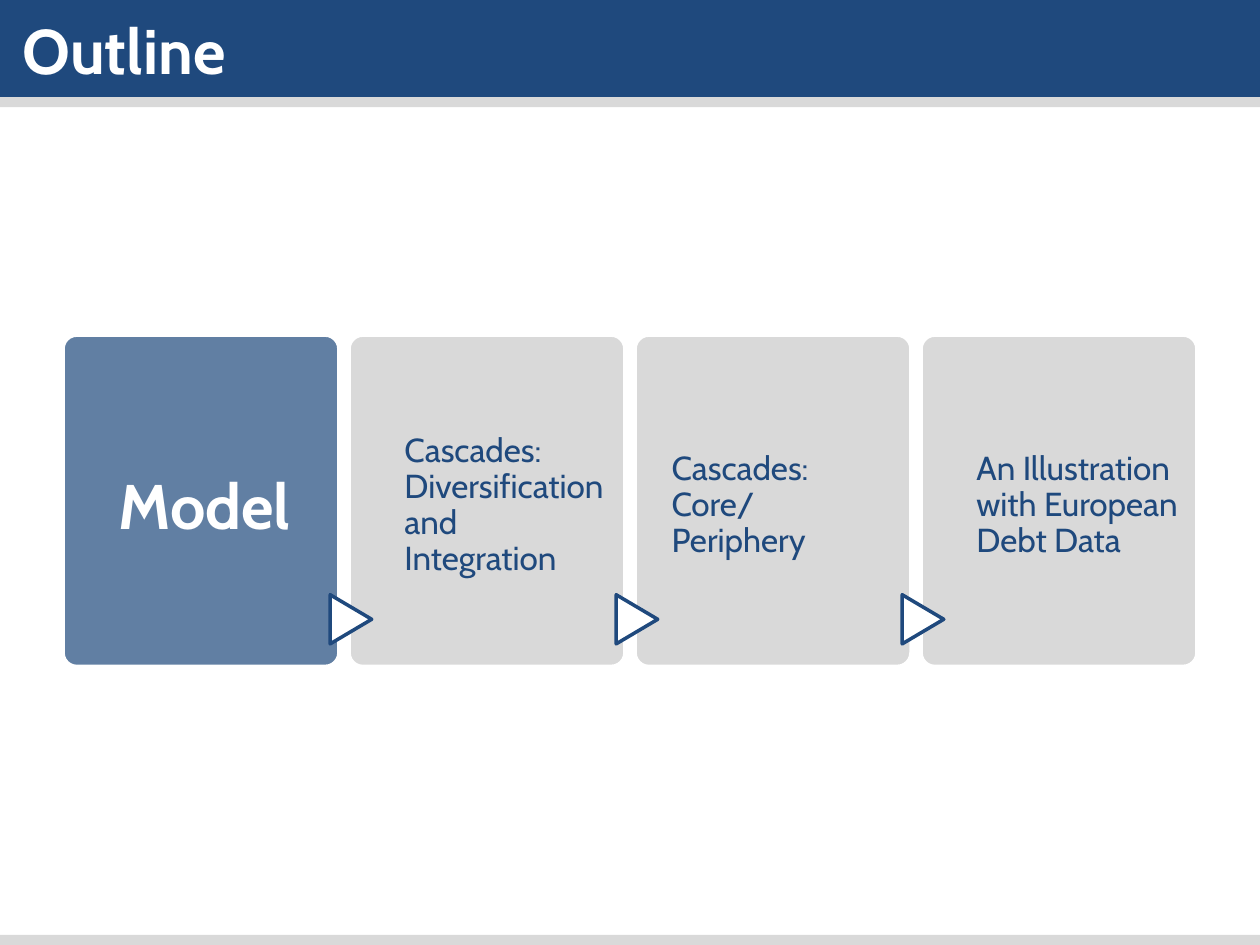
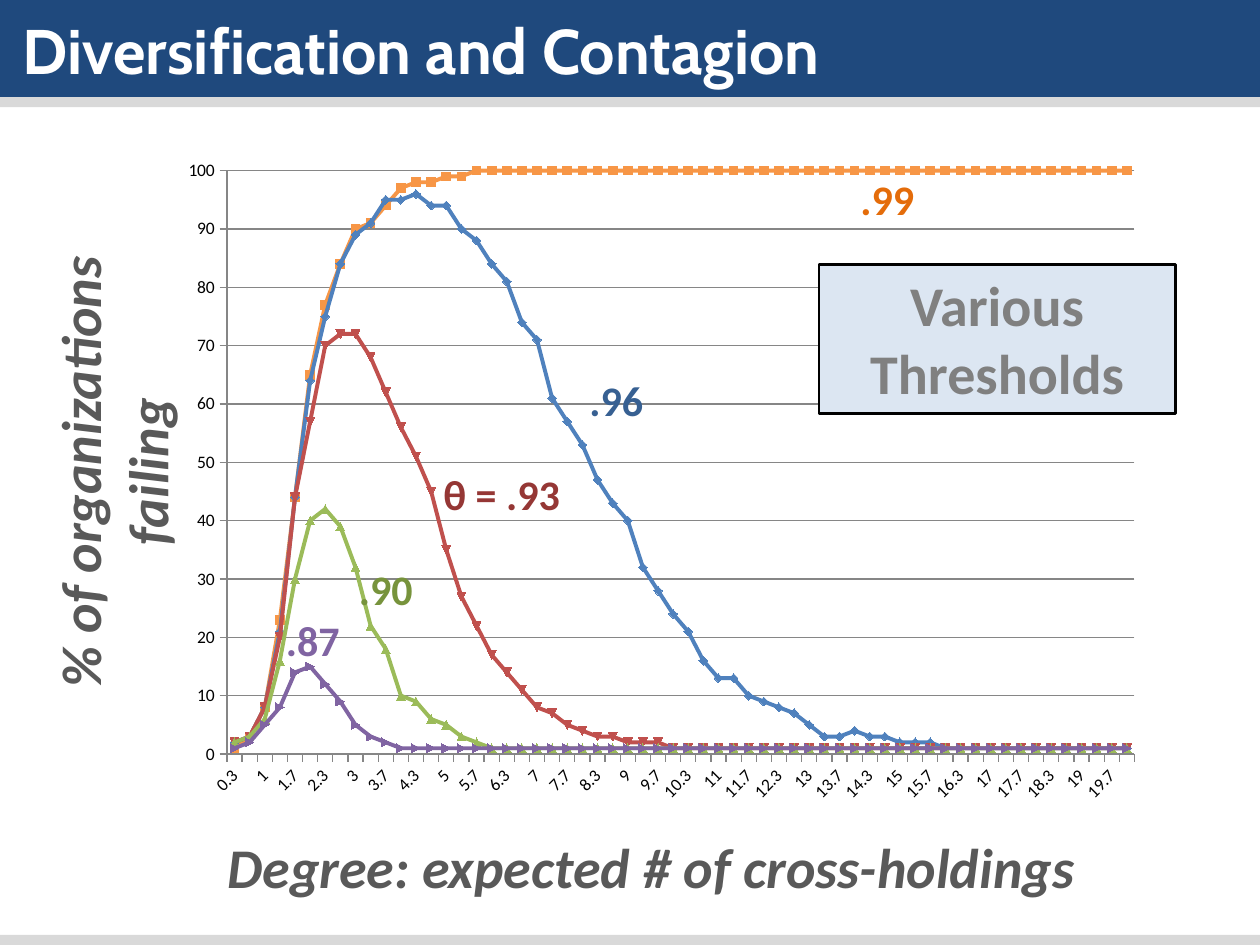
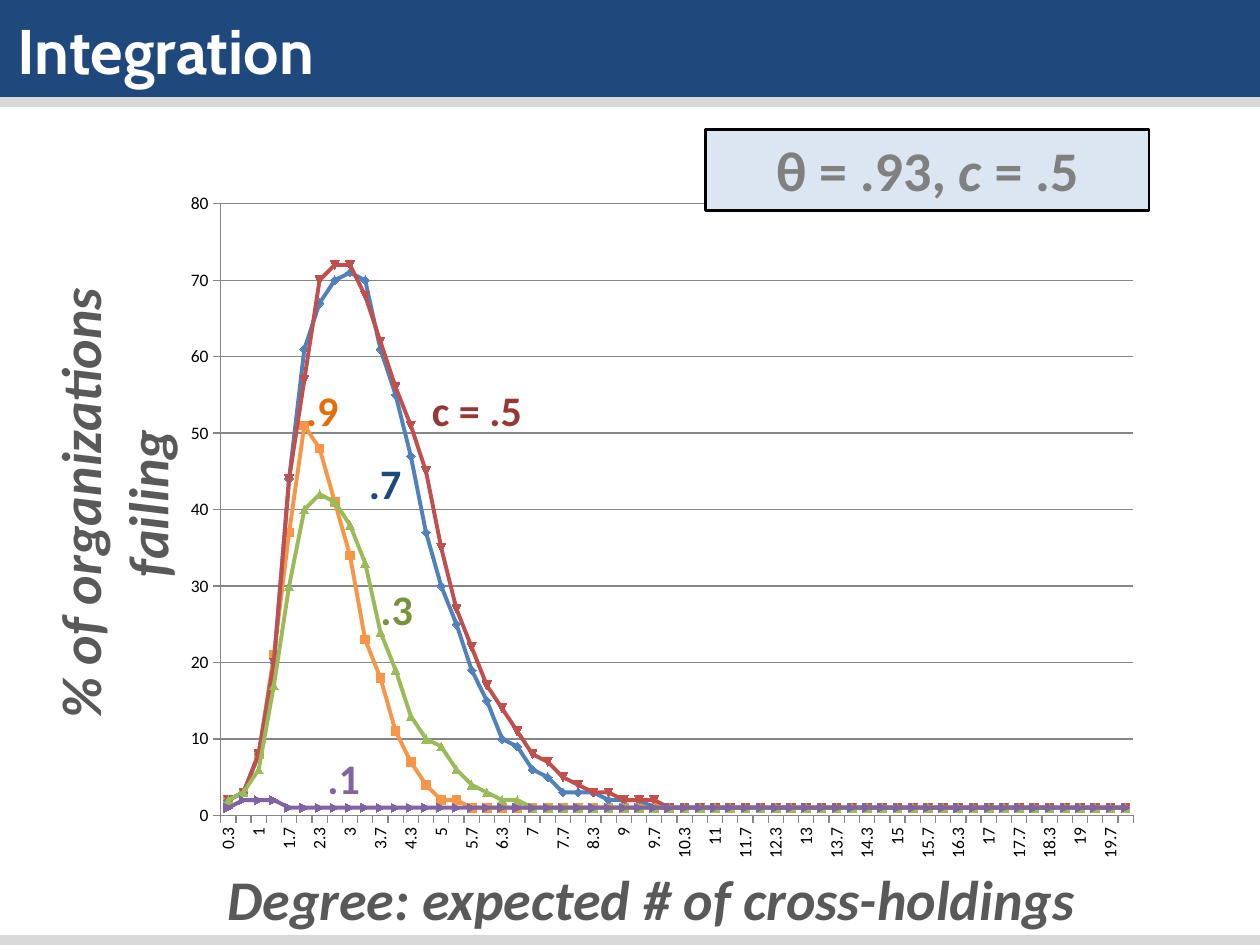
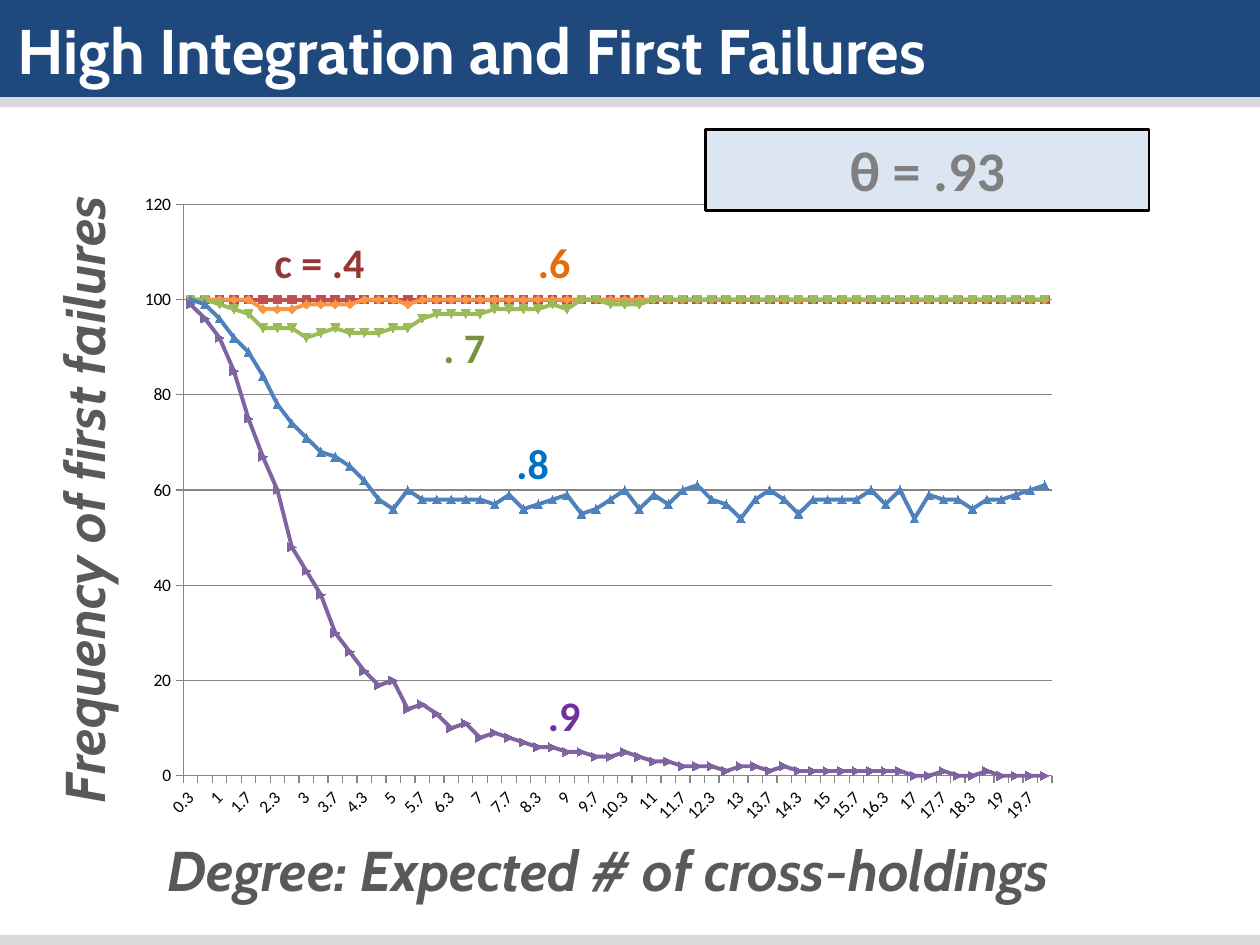
from lxml import etree
from pptx import Presentation
from pptx.chart.data import CategoryChartData
from pptx.dml.color import RGBColor
from pptx.enum.chart import XL_CHART_TYPE, XL_TICK_MARK
from pptx.enum.shapes import MSO_SHAPE
from pptx.enum.text import MSO_ANCHOR, MSO_AUTO_SIZE, PP_ALIGN
from pptx.oxml.ns import qn
from pptx.util import Pt

RECT, ROUNDED = MSO_SHAPE.RECTANGLE, MSO_SHAPE.ROUNDED_RECTANGLE
TRIANGLE = MSO_SHAPE.FLOWCHART_EXTRACT
LEFT, CENTER = PP_ALIGN.LEFT, PP_ALIGN.CENTER
TOP, MIDDLE = MSO_ANCHOR.TOP, MSO_ANCHOR.MIDDLE
NO_FIT, GROW = MSO_AUTO_SIZE.NONE, MSO_AUTO_SIZE.SHAPE_TO_FIT_TEXT
LINE_MARKERS, OUTSIDE = XL_CHART_TYPE.LINE_MARKERS, XL_TICK_MARK.OUTSIDE

EMU_PER_PX = 9144
SLIDE_W, SLIDE_H = 1000, 750
TITLE_ONLY = 5
HEAD_FONT, BODY_FONT = "Cabin", "Calibri"
NAVY, SILVER, WHITE, BLACK = "1F497D", "D9D9D9", "FFFFFF", "000000"
PALE_BLUE, GRAY, DARK_GRAY, GRID = "DCE6F2", "808080", "595959", "868686"
ORANGE, BLUE, RED, GREEN, PURPLE = "F79646", "4F81BD", "C0504D", "9BBB59", "8064A2"
ORANGE_TEXT, RED_TEXT, GREEN_TEXT = "E46C0A", "953735", "77933C"

POINTS = 60
DEGREES = [f"{round(i / 3, 1):g}" for i in range(1, POINTS + 1)]
BASELINE = [2, 3, 8, 20, 44, 57, 70, 72, 72, 68, 62, 56, 51, 45, 35, 27, 22, 17, 14,
            11, 8, 7, 5, 4, 3, 3, 2, 2, 2, 1]
THRESHOLD_SERIES = [
    (ORANGE, [1, 3, 8, 23, 44, 65, 77, 84, 90, 91, 94, 97, 98, 98, 99, 99, 100]),
    (BLUE, [2, 3, 8, 21, 44, 64, 75, 84, 89, 91, 95, 95, 96, 94, 94, 90, 88, 84, 81,
            74, 71, 61, 57, 53, 47, 43, 40, 32, 28, 24, 21, 16, 13, 13, 10, 9, 8, 7,
            5, 3, 3, 4, 3, 3, 2, 2, 2, 1]),
    (RED, BASELINE),
    (GREEN, [2, 3, 6, 16, 30, 40, 42, 39, 32, 22, 18, 10, 9, 6, 5, 3, 2, 1]),
    (PURPLE, [1, 2, 5, 8, 14, 15, 12, 9, 5, 3, 2, 1]),
]
INTEGRATION_SERIES = [
    (ORANGE, [2, 3, 8, 21, 37, 51, 48, 41, 34, 23, 18, 11, 7, 4, 2, 2, 1]),
    (BLUE, [2, 3, 8, 20, 44, 61, 67, 70, 71, 70, 61, 55, 47, 37, 30, 25, 19, 15, 10,
            9, 6, 5, 3, 3, 3, 2, 2, 2, 1]),
    (RED, BASELINE),
    (GREEN, [2, 3, 6, 17, 30, 40, 42, 41, 38, 33, 24, 19, 13, 10, 9, 6, 4, 3, 2, 2, 1]),
    (PURPLE, [1, 2, 2, 2, 1]),
]
FAILURE_SERIES = [
    (RED, [100]),
    (ORANGE, [100, 100, 100, 100, 100, 98, 98, 98, 99, 99, 99, 99, 100, 100, 100, 99,
              100]),
    (GREEN, [100, 100, 99, 98, 97, 94, 94, 94, 92, 93, 94, 93, 93, 93, 94, 94, 96, 97,
             97, 97, 97, 98, 98, 98, 98, 99, 98, 100, 100, 99, 99, 99, 100]),
    (BLUE, [100, 99, 96, 92, 89, 84, 78, 74, 71, 68, 67, 65, 62, 58, 56, 60, 58, 58,
            58, 58, 58, 57, 59, 56, 57, 58, 59, 55, 56, 58, 60, 56, 59, 57, 60, 61,
            58, 57, 54, 58, 60, 58, 55, 58, 58, 58, 58, 60, 57, 60, 54, 59, 58, 58,
            56, 58, 58, 59, 60, 61]),
    (PURPLE, [99, 96, 92, 85, 75, 67, 60, 48, 43, 38, 30, 26, 22, 19, 20, 14, 15, 13,
              10, 11, 8, 9, 8, 7, 6, 6, 5, 5, 4, 4, 5, 4, 3, 3, 2, 2, 2, 1, 2, 2, 1,
              2, 1, 1, 1, 1, 1, 1, 1, 1, 0, 0, 1, 0, 0, 1, 0]),
]


def px(n):
    """Turn pixels into EMU."""
    return n * EMU_PER_PX


def emu_box(box):
    """Turn a left, top, width, height box into EMU."""
    return [px(n) for n in box]


def rgb(color):
    """Turn a hex string into a colour."""
    return RGBColor.from_string(color)


def write(tf, text, size=24, font=BODY_FONT, color=BLACK, bold=True, italic=False,
          align=LEFT, anchor=TOP, fit=NO_FIT, spacing=None, insets=None):
    """Write one paragraph, given as a string or as (text, italic) runs."""
    tf.word_wrap, tf.auto_size, tf.vertical_anchor = True, fit, anchor
    if insets:
        tf.margin_left, tf.margin_top, tf.margin_right, tf.margin_bottom = emu_box(insets)
    p = tf.paragraphs[0]
    p.alignment = align
    if spacing:
        p.line_spacing = spacing
    for part, slanted in [(text, italic)] if isinstance(text, str) else text:
        r = p.add_run()
        r.text = part
        r.font.size, r.font.name = Pt(size), font
        r.font.bold, r.font.italic = bold, slanted
        r.font.color.rgb = rgb(color)


def add_text(shapes, box, text, vertical=False, **fmt):
    """Add a text box, optionally reading upwards."""
    sp = shapes.add_textbox(*emu_box(box))
    write(sp.text_frame, text, **fmt)
    if vertical:
        sp.element.txBody.bodyPr.set("vert", "vert270")
    return sp


def add_block(shapes, kind, box, fill, line=None, width=2):
    """Add a filled preset shape, with an outline when a colour is given."""
    sp = shapes.add_shape(kind, *emu_box(box))
    sp.shadow.inherit = False
    sp.fill.solid()
    sp.fill.fore_color.rgb = rgb(fill)
    if line:
        sp.line.color.rgb = rgb(line)
        sp.line.width = Pt(width)
    else:
        sp.line.fill.background()
    return sp


def add_master_bands(prs, s):
    """Put the header and footer bands behind everything on the master."""
    tree = prs.slide_master.shapes.element
    bands = [(0, 77, NAVY), (77, 8, SILVER), (SLIDE_H - 8, 8, SILVER)]
    for i, (top, height, fill) in enumerate(bands):
        sp = add_block(s.shapes, RECT, (0, top, SLIDE_W, height), fill)
        tree.insert(2 + i, sp.element)


def add_slide(prs, title, box):
    """Add a slide with its title in the header band."""
    s = prs.slides.add_slide(prs.slide_layouts[TITLE_ONLY])
    sp = s.shapes.title
    sp.left, sp.top, sp.width, sp.height = emu_box(box)
    write(sp.text_frame, title, size=36, font=HEAD_FONT, color=WHITE, anchor=MIDDLE)
    return s


def add_step(shapes, box, active):
    """Add one outline card, highlighted when active."""
    card = add_block(shapes, ROUNDED, box, NAVY if active else SILVER, WHITE)
    card.adjustments[0] = 0.05
    if active:
        color = card.element.spPr.find(qn("a:solidFill"))[0]
        etree.SubElement(color, qn("a:alpha"), val="70000")


def add_outline(s, box, steps, pitch=227, card_w=219):
    """Add a row of step cards with arrows between them."""
    left, top, _, height = box
    shapes = s.shapes.add_group_shape().shapes
    for i, (text, indent, text_w) in enumerate(steps):
        x = left + i * pitch
        active = i == 0
        add_step(shapes, (x, top, card_w, height), active)
        if not active:
            arrow = add_block(shapes, TRIANGLE, (x - 18, top + 209, 39, 33), WHITE, NAVY)
            arrow.rotation = 90
        add_text(shapes, (x + indent, top, text_w, height), text, font=HEAD_FONT,
                 size=36 if active else 19, color=WHITE if active else NAVY,
                 bold=active, anchor=MIDDLE, spacing=0.9,
                 insets=(0, 14 if active else 8, 0, 0))


def add_line_chart(s, box, series, rotation, top_value=None):
    """Add a marker line chart over the shared degree categories."""
    data = CategoryChartData()
    data.categories = DEGREES
    for i, (_, vals) in enumerate(series, 1):
        data.add_series(f"Series {i}", vals + vals[-1:] * (POINTS - len(vals)))
    chart = s.shapes.add_chart(LINE_MARKERS, *emu_box(box), data).chart
    chart.has_legend = chart.has_title = False
    chart.font.size, chart.font.name = Pt(10), BODY_FONT
    chart.font.color.rgb = rgb(BLACK)
    cat, val = chart.category_axis, chart.value_axis
    for axis in (cat, val):
        axis.major_tick_mark = OUTSIDE
        axis.format.line.color.rgb = rgb(GRID)
        axis.tick_labels.font.size = Pt(10)
    val.has_major_gridlines = True
    val.major_gridlines.format.line.color.rgb = rgb(GRID)
    val.maximum_scale = top_value
    body = chart.element.find(".//" + qn("c:catAx")).find(qn("c:txPr"))[0]
    body.set("rot", str(-60000 * rotation))
    body.set("vert", "horz")
    for line, (color, _) in zip(chart.plots[0].series, series):
        line.smooth = False
        line.format.line.color.rgb = rgb(color)
        line.format.line.width = Pt(2.25)
        line.marker.format.fill.solid()
        line.marker.format.fill.fore_color.rgb = rgb(color)
        line.marker.format.line.color.rgb = rgb(color)


def add_curve_labels(s, labels):
    """Label the curves at the given corners."""
    for text, left, top, width, color in labels:
        add_text(s.shapes, (left, top, width, 50), text, color=color, fit=GROW)


def add_axis_titles(s, x_title, x_box, y_title, y_box, font=BODY_FONT, y_fit=GROW):
    """Add the titles below and left of the chart."""
    fmt = dict(size=32, font=font, color=DARK_GRAY, italic=True, align=CENTER)
    add_text(s.shapes, y_box, y_title, vertical=True, fit=y_fit, **fmt)
    add_text(s.shapes, x_box, x_title, fit=GROW, **fmt)


def add_callout(s, box, text):
    """Add the framed box that names the parameters."""
    sp = add_block(s.shapes, RECT, box, PALE_BLUE, BLACK, 1.5)
    write(sp.text_frame, text, size=32, color=GRAY, align=CENTER, fit=GROW)


def outline_slide(prs):
    """Build the outline slide and the bands it shares."""
    s = add_slide(prs, "Outline", (8, 0, 554, 78))
    add_master_bands(prs, s)
    add_outline(s, (50, 266, 900, 263), [
        ("Model", 44, 163),
        ("Cascades: Diversification and Integration", 44, 163),
        ("Cascades: Core/ Periphery", 29, 170),
        ("An Illustration with European Debt Data", 44, 163),
    ])


def threshold_slide(prs):
    """Build the slide on diversification."""
    s = add_slide(prs, "Diversification and Contagion", (8, 0, 983, 78))
    add_line_chart(s, (134, 117, 782, 530), THRESHOLD_SERIES, 45, 100)
    add_curve_labels(s, [
        (".99", 673, 133, 135, ORANGE_TEXT),
        (".96", 458, 292, 83, "376092"),
        (".90", 275, 442, 83, GREEN_TEXT),
        (".87", 217, 483, 83, PURPLE),
        ("θ = .93", 342, 367, 125, RED_TEXT),
    ])
    add_callout(s, (650, 210, 283, 118), "Various Thresholds")
    add_axis_titles(s, "Degree: expected # of cross-holdings", (117, 656, 800, 64),
                    "% of organizations failing", (31, 133, 74, 483))


def integration_slide(prs):
    """Build the slide on integration."""
    s = add_slide(prs, "Integration", (4, 0, 658, 78))
    add_line_chart(s, (136, 143, 779, 549), INTEGRATION_SERIES, 90)
    add_curve_labels(s, [
        (".7", 283, 358, 83, NAVY),
        (".3", 292, 458, 83, GREEN_TEXT),
        (".9", 233, 300, 83, ORANGE_TEXT),
        (".1", 250, 592, 83, PURPLE),
        ("c = .5", 333, 300, 117, RED_TEXT),
    ])
    add_callout(s, (560, 103, 352, 64),
                [("θ = .93, ", False), ("c ", True), ("= .5", False)])
    add_axis_titles(s, "Degree: expected # of cross-holdings", (117, 681, 800, 64),
                    "% of organizations failing", (31, 158, 74, 483))


def first_failure_slide(prs):
    """Build the slide on first failures."""
    s = add_slide(prs, "High Integration and First Failures", (4, 0, 979, 78))
    add_line_chart(s, (100, 144, 750, 520), FAILURE_SERIES, 45)
    add_curve_labels(s, [
        ("c = .4", 208, 183, 130, RED_TEXT),
        (".6", 417, 183, 83, ORANGE_TEXT),
        (". 7", 342, 250, 83, GREEN_TEXT),
        (".8", 400, 342, 83, "0070C0"),
        (".9", 425, 542, 83, "7030A0"),
    ])
    add_callout(s, (560, 103, 352, 64), "θ = .93")
    add_axis_titles(s, "Degree: Expected # of cross-holdings", (83, 658, 800, 64),
                    "Frequency of first failures", (34, 142, 50, 509),
                    font=HEAD_FONT, y_fit=NO_FIT)


def main():
    """Build and save the slides."""
    prs = Presentation()
    prs.slide_width, prs.slide_height = px(SLIDE_W), px(SLIDE_H)
    outline_slide(prs)
    threshold_slide(prs)
    integration_slide(prs)
    first_failure_slide(prs)
    prs.save("out.pptx")


if __name__ == "__main__":
    main()
